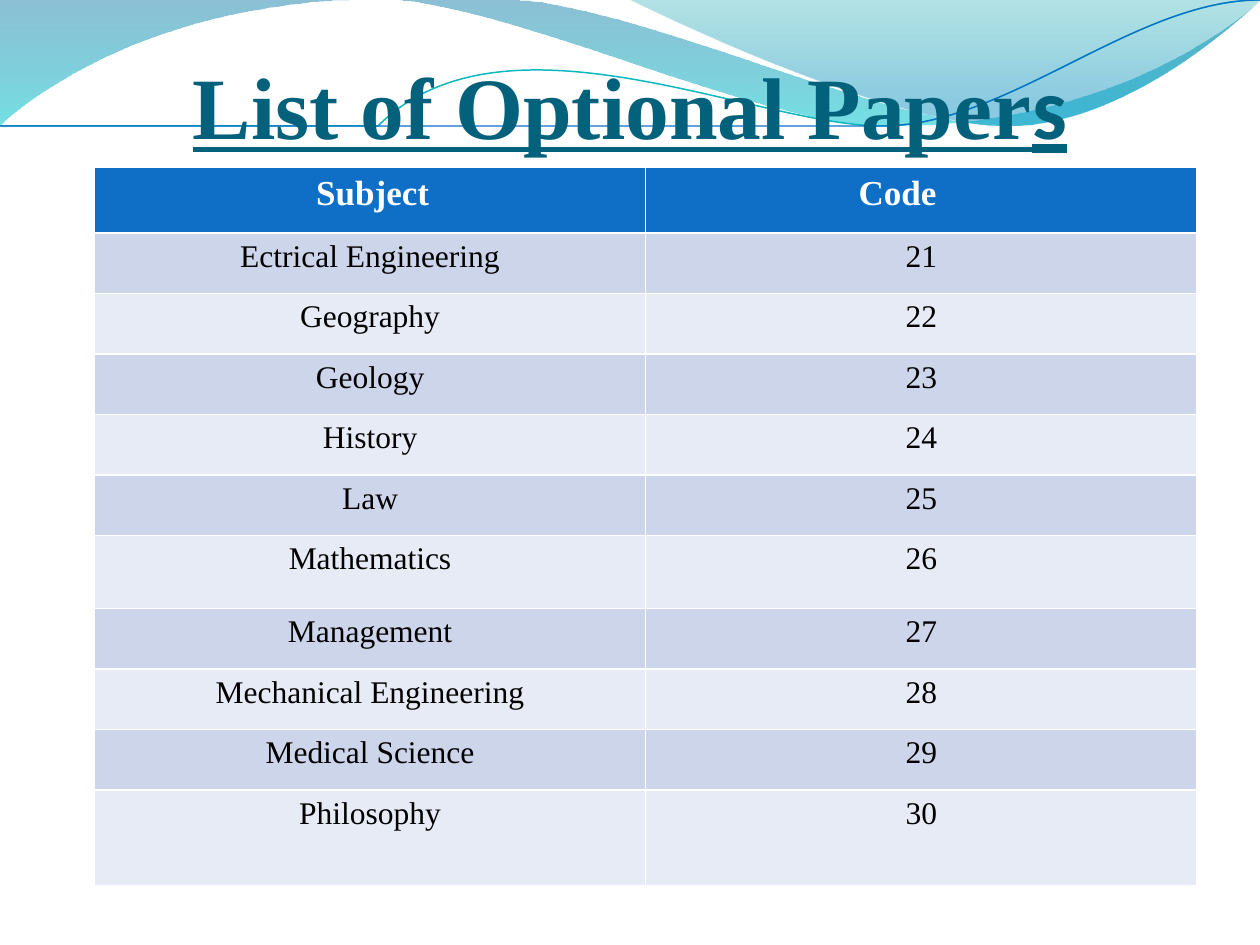
from dataclasses import dataclass
from typing import Optional

from lxml import etree
from pptx import Presentation
from pptx.dml.color import RGBColor
from pptx.enum import text as t
from pptx.oxml.ns import qn
from pptx.util import Inches, Pt

WHITE = RGBColor(0xFF, 0xFF, 0xFF)
BLACK = RGBColor(0, 0, 0)
TITLE_TEAL = RGBColor(0x04, 0x61, 0x7B)
HEADER_BLUE = RGBColor(0x0F, 0x6F, 0xC6)
LINE_TEAL = RGBColor(0x0A, 0xB8, 0xBF)
ROW_DARK = RGBColor(0xCC, 0xD5, 0xEA)
ROW_LIGHT = RGBColor(0xE7, 0xEB, 0xF5)
SERIF = "Times New Roman"


@dataclass
class Stop:
    position: float
    color: RGBColor
    opacity: int  # percent


@dataclass
class Wave:
    """Segments hold one point (straight) or three (cubic curve), in inches."""
    start: tuple
    segments: list
    gradient: Optional[tuple] = None
    line_color: Optional[RGBColor] = None
    line_width: float = 0


WAVES = [
    Wave((0, 0), [
        [(4.4, -0.01)],
        [(4.76, 0.17), (6.64, 0.63), (7.58, 0.63)],
        [(8.53, 0.63), (9.58, 0.26), (10, 0.09)],
        [(10.01, 0.36)],
        [(9.83, 0.44), (8.7, 0.76), (7.46, 0.75)],
        [(6.22, 0.75), (3.82, 0.28), (2.57, 0.34)],
        [(1.29, 0.36), (0.46, 0.83), (-0.01, 1.13)],
        [(0, 0)],
    ], gradient=(Stop(0, RGBColor(0x00, 0x74, 0xA1), 45),
                 Stop(1, RGBColor(0x00, 0xC6, 0xCF), 55))),
    Wave((4.79, -0.01), [
        [(5.09, 0.11), (6.82, 0.62), (7.69, 0.65)],
        [(8.56, 0.69), (9.61, 0.32), (10, 0.21)],
        [(10, 0)],
        [(4.79, -0.01)],
    ], gradient=(Stop(0, RGBColor(0x00, 0xA1, 0xA9), 30),
                 Stop(0.8, RGBColor(0x00, 0x8B, 0xBF), 45))),
    Wave((0, 1.11), [
        [(0.48, 0.93), (1.58, 0.57), (2.77, 0.52)],
        [(3.95, 0.47), (5.93, 0.89), (7.13, 0.8)],
        [(8.33, 0.71), (9.38, 0.15), (9.98, -0.02)],
    ], line_color=LINE_TEAL, line_width=0.85),
    Wave((0, 1.04), [
        [(0.47, 0.96), (1.64, 0.61), (2.83, 0.56)],
        [(4.03, 0.51), (5.97, 0.84), (7.17, 0.75)],
        [(8.36, 0.67), (9.41, 0.21), (10, 0.06)],
    ], line_color=HEADER_BLUE, line_width=0.75),
]

SUBJECTS = ["Ectrical Engineering", "Geography", "Geology", "History", "Law",
            "Mathematics", "Management", "Mechanical Engineering",
            "Medical Science", "Philosophy"]
FIRST_CODE = 21
HEADER_INDENTS = {"Subject": 1.76, "Code": 1.69}
ROW_HEIGHT = 0.48
SPECIAL_HEIGHTS = {0: 0.52, 6: 0.58, 10: 0.76}


def bend_segments(outline, segments: list) -> None:
    """Turn each run of three straight steps into one cubic curve."""
    steps = iter(list(outline.iter(qn("a:lnTo"))))
    for segment in segments:
        group = [next(steps) for _ in segment]
        if len(group) == 3:
            curve = etree.Element(qn("a:cubicBezTo"))
            group[0].addprevious(curve)
            for step in group:
                curve.append(step[0])
                step.getparent().remove(step)


def draw_wave(slide, wave: Wave) -> None:
    builder = slide.shapes.build_freeform(*wave.start, scale=Inches(1))
    points = [point for segment in wave.segments for point in segment]
    builder.add_line_segments(points, close=wave.gradient is not None)
    shape = builder.convert_to_shape()
    shape.shadow.inherit = False
    bend_segments(shape._element, wave.segments)
    if wave.gradient:
        shape.line.fill.background()
        shape.fill.gradient()
        shape.fill.gradient_angle = 270
        for target, stop in zip(shape.fill.gradient_stops, wave.gradient):
            target.position = stop.position
            target.color.rgb = stop.color
        colors = shape._element.spPr.iter(qn("a:srgbClr"))
        for color, stop in zip(colors, wave.gradient):
            etree.SubElement(color, qn("a:alpha"), val=str(stop.opacity * 1000))
    else:
        shape.fill.background()
        shape.line.color.rgb = wave.line_color
        shape.line.width = Pt(wave.line_width)


def add_run(paragraph, words: str, size: float, color: RGBColor,
            bold: bool = False, font: str = SERIF):
    run = paragraph.add_run()
    run.text = words
    run.font.name, run.font.size, run.font.bold = font, Pt(size), bold
    run.font.color.rgb = color
    return run


def format_title(title) -> None:
    title.left, title.top = Inches(0.5), Inches(0)
    title.width, title.height = Inches(9), Inches(1.25)
    frame = title.text_frame
    frame.auto_size = t.MSO_AUTO_SIZE.NONE
    frame.vertical_anchor = t.MSO_ANCHOR.BOTTOM
    frame.margin_left = frame.margin_right = frame.margin_bottom = 0
    frame.margin_top = Inches(0.05)
    paragraph = frame.paragraphs[0]
    paragraph.alignment = t.PP_ALIGN.CENTER
    for words, font in (("List of Optional Paper", SERIF), ("s", "Calibri")):
        add_run(paragraph, words, 50, TITLE_TEAL, True, font).font.underline = True


def fill_cell(cell, color: RGBColor) -> None:
    cell.fill.solid()
    cell.fill.fore_color.rgb = color


def add_papers_table(slide) -> None:
    papers = slide.shapes.add_table(
        len(SUBJECTS) + 1, len(HEADER_INDENTS),
        Inches(0.75), Inches(1.33), Inches(8.75), Inches(5.67)).table
    for index, row in enumerate(papers.rows):
        row.height = Inches(SPECIAL_HEIGHTS.get(index, ROW_HEIGHT))
    for column, (heading, indent) in enumerate(HEADER_INDENTS.items()):
        cell = papers.cell(0, column)
        fill_cell(cell, HEADER_BLUE)
        cell.margin_left = Inches(indent)
        add_run(cell.text_frame.paragraphs[0], heading, 20, WHITE, True)
    for row, subject in enumerate(SUBJECTS, start=1):
        code = str(FIRST_CODE + row - 1)
        for column, words in enumerate((subject, code)):
            cell = papers.cell(row, column)
            fill_cell(cell, ROW_DARK if row % 2 else ROW_LIGHT)
            paragraph = cell.text_frame.paragraphs[0]
            paragraph.alignment = t.PP_ALIGN.CENTER
            add_run(paragraph, words, 18, BLACK)


def main() -> None:
    deck = Presentation()
    deck.slide_width, deck.slide_height = Inches(10), Inches(7.5)
    slide = deck.slides.add_slide(deck.slide_layouts[5])
    title = slide.shapes.title
    for wave in WAVES:
        draw_wave(slide, wave)
    slide.shapes._spTree.append(title._element)  # title in front of the waves
    format_title(title)
    add_papers_table(slide)
    deck.save("out.pptx")


if __name__ == "__main__":
    main()
